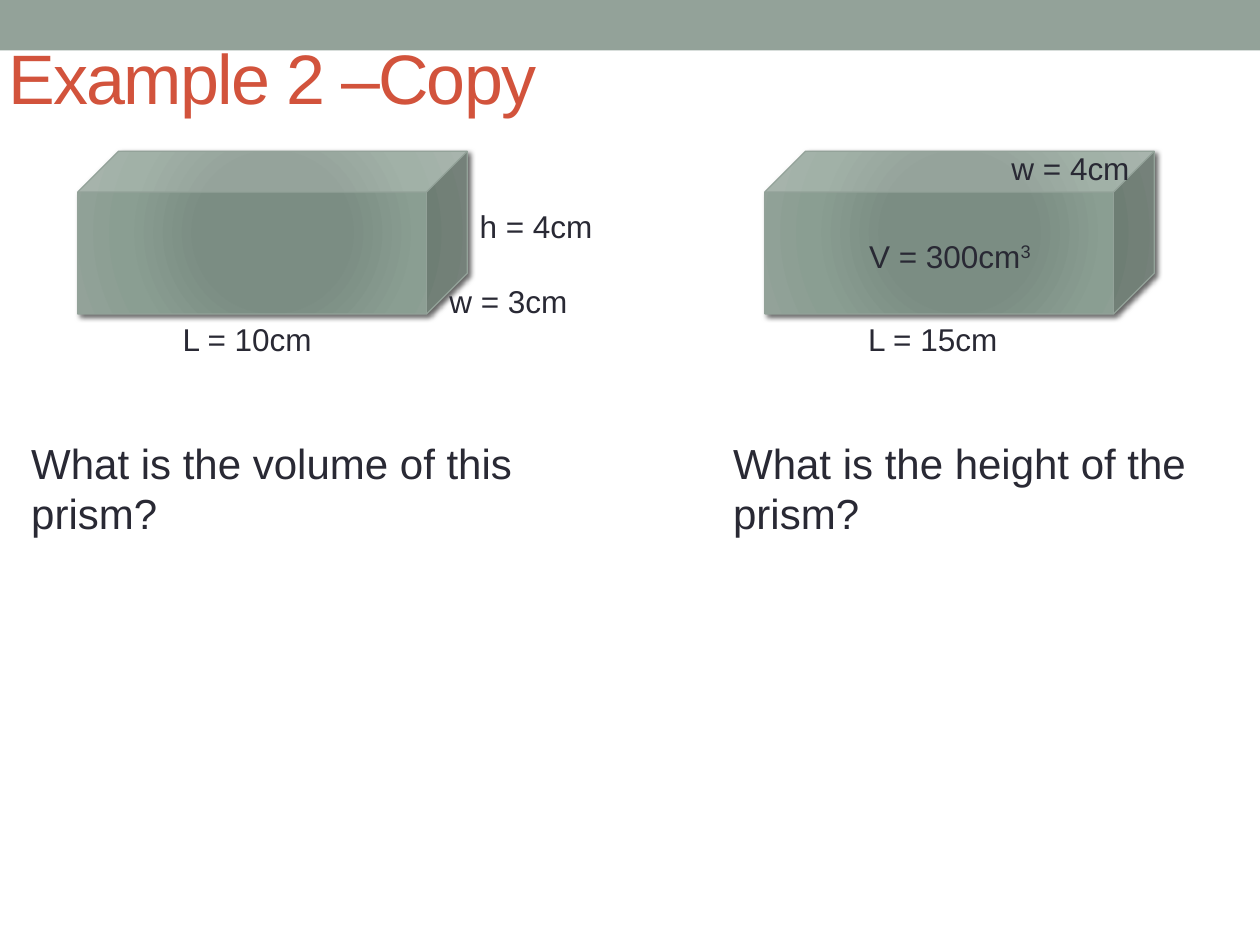
from dataclasses import dataclass

from lxml import etree
from pptx import Presentation
from pptx import util as u
from pptx.dml.color import RGBColor
from pptx.enum import shapes, text
from pptx.oxml import ns, parse_xml

FONT = "Arial"
SAGE, INK, RUST = "93A299", "292934", "D2533C"
CUBE_STOPS = ((0, "7B8E82"), (34, "7B8D83"), (70, "8A9E92"), (100, SAGE))


@dataclass
class Label:
    left: float
    top: float
    width: float
    height: float
    words: str
    size: int = 18
    superscript: str = ""


def colour(value: str) -> RGBColor:
    return RGBColor.from_string(value)


def place(shape, left: float, top: float, width: float, height: float) -> None:
    shape.left, shape.top = u.Cm(left), u.Cm(top)
    shape.width, shape.height = u.Cm(width), u.Cm(height)


def style(para, size: int, value: str) -> None:
    para.font.name = FONT
    para.font.size = u.Pt(size)
    para.font.color.rgb = colour(value)


def add_label(page, label: Label) -> None:
    box = page.shapes.add_textbox(u.Cm(label.left), u.Cm(label.top),
                                  u.Cm(label.width), u.Cm(label.height))
    box.text_frame.word_wrap = True
    para = box.text_frame.paragraphs[0]
    para.add_run().text = label.words
    style(para, label.size, INK)
    if label.superscript:
        span = para.add_run()
        span.text = label.superscript
        span.font._element.set("baseline", "30000")


def add_prism(page, left: float) -> None:
    prism = page.shapes.add_shape(shapes.MSO_SHAPE.CUBE, u.Cm(left), u.Cm(3.05),
                                  u.Cm(7.85), u.Cm(3.28))
    prism.line.color.rgb = colour(SAGE)
    prism.line.width = u.Pt(0.75)
    outline = prism._element.spPr.find(ns.qn("a:ln"))

    # Radial gradient and soft shadow
    stops = "".join(f'<a:gs pos="{position * 1000}"><a:srgbClr val="{value}"/></a:gs>'
                    for position, value in CUBE_STOPS)
    outline.addprevious(parse_xml(
        f'<a:gradFill {ns.nsdecls("a")} rotWithShape="1"><a:gsLst>{stops}</a:gsLst>'
        '<a:path path="circle">'
        '<a:fillToRect l="100000" t="100000" r="100000" b="100000"/>'
        '</a:path></a:gradFill>'))
    outline.addnext(parse_xml(
        f'<a:effectLst {ns.nsdecls("a")}>'
        f'<a:outerShdw blurRad="{u.Pt(3)}" dist="{u.Pt(2)}" dir="2700000" rotWithShape="0">'
        '<a:srgbClr val="000000"><a:alpha val="60000"/></a:srgbClr>'
        '</a:outerShdw></a:effectLst>'))


def add_title(page, words: str) -> None:
    title = page.shapes.title
    place(title, -0.08, 0.18, 22.86, 2.74)
    frame = title.text_frame
    frame.text = words
    frame.auto_size = text.MSO_AUTO_SIZE.NONE
    frame.vertical_anchor = text.MSO_ANCHOR.MIDDLE
    para = frame.paragraphs[0]
    para.alignment = text.PP_ALIGN.LEFT
    style(para, 40, RUST)
    para.runs[0].font._element.set("spc", "-100")


def main() -> None:
    deck = Presentation()
    deck.slide_width, deck.slide_height = u.Cm(25.4), u.Cm(19.05)
    page = deck.slides.add_slide(deck.slide_layouts[5])

    # Top band, behind the title
    band = page.shapes.add_shape(shapes.MSO_SHAPE.RECTANGLE, 0, 0,
                                 deck.slide_width, u.Cm(1.02))
    band.shadow.inherit = False
    band.fill.solid()
    band.fill.fore_color.rgb = colour(SAGE)
    band.line.fill.background()
    page.shapes.title._element.addprevious(band._element)

    add_title(page, "Example 2 –Copy")

    # Prisms
    for left in (1.57, 15.42):
        add_prism(page, left)

    # Questions and dimensions
    for label in (
        Label(0.38, 8.69, 11.99, 2.69, "What is the volume of this prism?", 24),
        Label(14.53, 8.69, 10.21, 2.31, "What is the height of the prism?", 24),
        Label(9.42, 4.04, 2.95, 1.02, "h = 4cm"),
        Label(3.43, 6.32, 3.4, 1.02, "L = 10cm"),
        Label(8.81, 5.56, 2.95, 1.02, "w = 3cm"),
        Label(20.14, 2.87, 3.76, 1.02, "w = 4cm"),
        Label(17.25, 6.32, 3.48, 1.02, "L = 15cm"),
        Label(17.27, 4.65, 4.04, 1.02, "V = 300cm", superscript="3"),
    ):
        add_label(page, label)

    deck.save("out.pptx")


if __name__ == "__main__":
    main()
